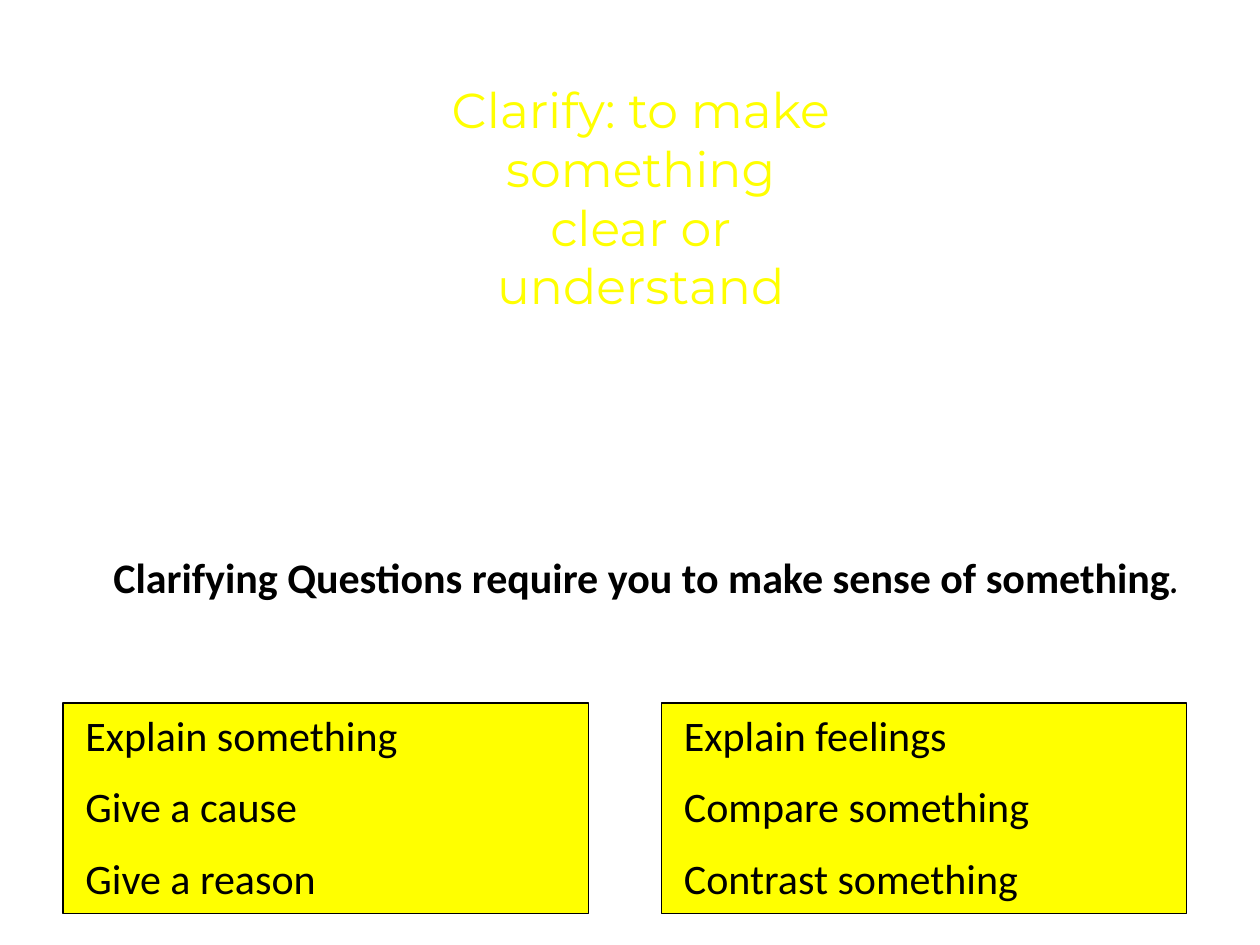
"""Build a slide that explains clarifying questions."""
from lxml import etree
from pptx import Presentation
from pptx.dml.color import RGBColor
from pptx.enum.shapes import MSO_SHAPE
from pptx.enum.text import MSO_ANCHOR, MSO_AUTO_SIZE, PP_ALIGN
from pptx.oxml.ns import qn
from pptx.util import Inches, Pt

RECTANGLE = MSO_SHAPE.RECTANGLE
TOP = MSO_ANCHOR.TOP
NO_AUTOFIT = MSO_AUTO_SIZE.NONE
GROW = MSO_AUTO_SIZE.SHAPE_TO_FIT_TEXT
LEFT, CENTER = PP_ALIGN.LEFT, PP_ALIGN.CENTER

COLORS = {"yellow": "FFFF00", "black": "000000"}
DEFINITION = ["Clarify: to make", "something", "clear or", "understand"]
BOXES = [
    (0.5, ["Explain something", "Give a cause", "Give a reason"]),
    (5.25, ["Explain feelings", "Compare something", "Contrast something"]),
]


def add_run(paragraph, text, font_name, size, color, bold=False):
    run = paragraph.add_run()
    run.text = text
    run.font.name = font_name
    run.font.size = Pt(size)
    run.font.bold = bold
    run.font.color.rgb = RGBColor.from_string(COLORS[color])
    return run


def add_text_box(slide, left, top, width, height):
    text_box = slide.shapes.add_textbox(Inches(left), Inches(top), Inches(width), Inches(height))
    text_box.text_frame.word_wrap = True
    text_box.text_frame.auto_size = GROW
    return text_box.text_frame


presentation = Presentation()
presentation.slide_width = Inches(10)
presentation.slide_height = Inches(7.5)
slide = presentation.slides.add_slide(presentation.slide_layouts[5])

title = slide.shapes.title
title.left, title.top = Inches(0.92), Inches(0.58)
title.width, title.height = Inches(8.33), Inches(3.42)
title_frame = title.text_frame
title_frame.word_wrap = False
title_frame.auto_size = NO_AUTOFIT
title_frame.vertical_anchor = TOP
for index, line in enumerate(DEFINITION):
    paragraph = title_frame.add_paragraph() if index else title_frame.paragraphs[0]
    paragraph.alignment = CENTER
    run = add_run(paragraph, line, "Montserrat", 28, "yellow")
    outline = etree.Element(qn("a:ln"), w=str(Pt(0.75)))
    outline_fill = etree.SubElement(outline, qn("a:solidFill"))
    etree.SubElement(outline_fill, qn("a:srgbClr"), val=COLORS["black"])
    run.font._element.insert(0, outline)

statement = add_text_box(slide, 0.5, 4.33, 9.25, 0.5).paragraphs[0]
statement.alignment = CENTER
add_run(statement, "Clarifying Questions require you to make sense of something",
        "Calibri", 24, "black", bold=True)
add_run(statement, ".", "Comic Neue", 24, "black", bold=True)

for left, tasks in BOXES:
    box = slide.shapes.add_shape(RECTANGLE, Inches(left), Inches(5.58), Inches(4.17), Inches(1.67))
    box.shadow.inherit = False
    box.fill.solid()
    box.fill.fore_color.rgb = RGBColor.from_string(COLORS["yellow"])
    box.line.color.rgb = RGBColor.from_string(COLORS["black"])
    box.line.width = Pt(0.75)

    task_frame = add_text_box(slide, left + 0.08, 5.58, 4, 1.72)
    for index, task in enumerate(tasks):
        paragraph = task_frame.add_paragraph() if index else task_frame.paragraphs[0]
        paragraph.alignment = LEFT
        paragraph.space_before = Pt(12 if index else 0)
        add_run(paragraph, task, "Calibri", 24, "black")

presentation.save("out.pptx")
